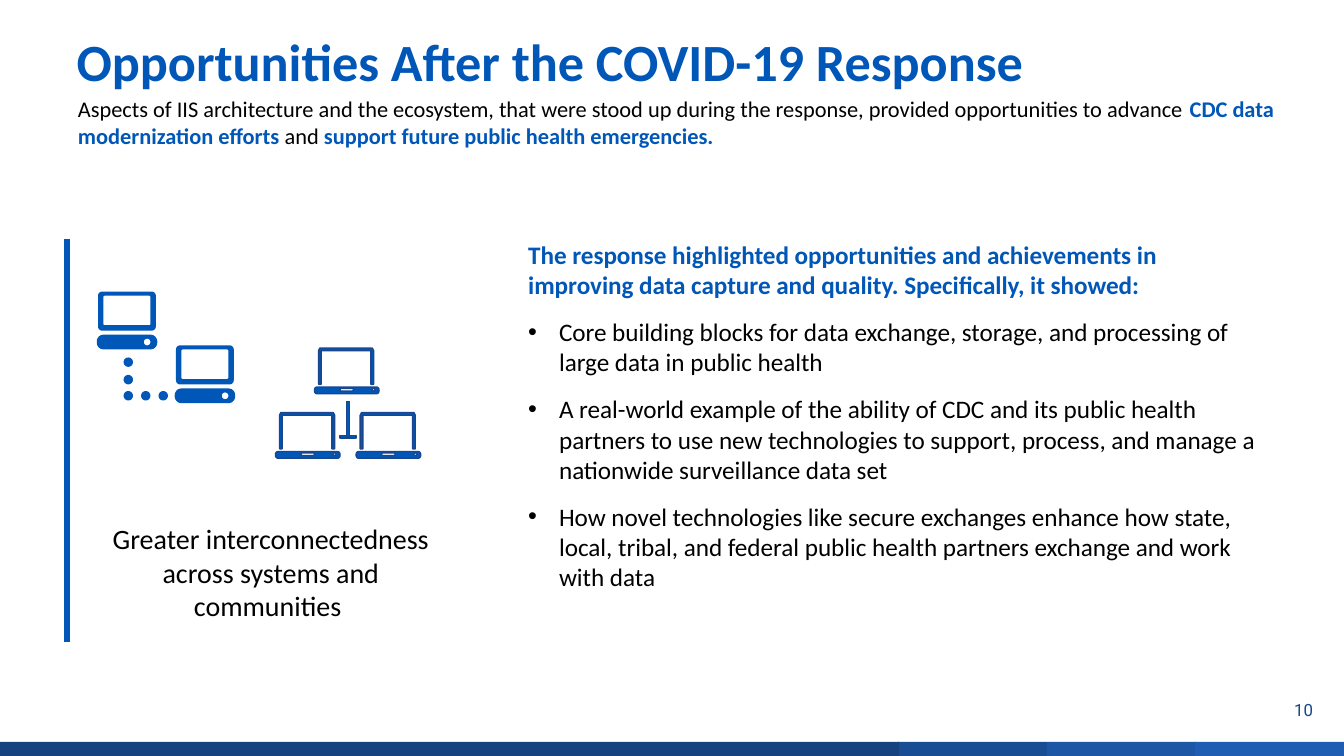
import math
from pptx import Presentation, util as u
from pptx.dml.color import RGBColor
from pptx.enum import shapes, text
from pptx.oxml.ns import qn
from lxml import etree

PX = 9144  # EMU per px, 100 px to the inch

THEME = {
    "blue": "0057B7", "edge": "1A468D", "white": "FFFFFF",
    "footer": ["194D93", "1C56A4", "1E5DB2", "164380"],
    # style: font, size, bold, colour
    "title": ("Calibri", 28, True, "0057B7"),
    "intro": ("Calibri", 12, False, "000000"),
    "intro_key": ("Calibri", 12, True, "0057B7"),
    "lead": ("Calibri", 13.5, True, "0057B7"),
    "bullet": ("Calibri", 13.5, False, "000000"),
    "caption": ("Calibri", 15, False, "000000"),
    "number": ("Roboto", 9, False, "17468F"),
}

prs = Presentation()
prs.slide_width = 1000 * PX
prs.slide_height = prs.slide_width * 9 // 16
s = prs.slides.add_slide(prs.slide_layouts[1])


def rounded(x, y, w, h, r):
    """Corner points of a rounded rectangle; r of half the side gives a circle."""
    corners = [(x + w - r, y + h - r), (x + r, y + h - r), (x + r, y + r), (x + w - r, y + r)]
    return [(cx + r * math.cos(math.radians(90 * i + a)), cy + r * math.sin(math.radians(90 * i + a)))
            for i, (cx, cy) in enumerate(corners) for a in range(0, 91, 15)]


def paint(sp, fill, line=None):
    """Flat fill, thin edge or none, no shadow."""
    sp.shadow.inherit = False
    sp.fill.solid()
    sp.fill.fore_color.rgb = RGBColor.from_string(fill)
    if line:
        sp.line.color.rgb = RGBColor.from_string(line)
        sp.line.width = u.Pt(0.75)
    else:
        sp.line.fill.background()


# Plain rectangles: footer bars, network joints, caption panel
bars = [(668 + 111 * i, 552, 111, 12) for i in range(2)] + [(889, 552, 111, 12), (0, 552, 669, 12)]
rects = [(box, color, None) for box, color in zip(bars, THEME["footer"])]
rects += [((253, 324, 12, 2), THEME["blue"], THEME["edge"]),
          ((258, 299, 2, 26), THEME["blue"], THEME["edge"]),
          ((72, 373, 259, 105), THEME["white"], None)]
for box, color, line in rects:
    sp = s.shapes.add_shape(shapes.MSO_SHAPE.RECTANGLE, *[v * PX for v in box])
    paint(sp, color, line)
caption = sp
clr = caption._element.spPr.find(qn("a:solidFill"))[0]
etree.SubElement(clr, qn("a:alpha"), val="54000")

# Vertical rule at the left
rule = s.shapes.add_connector(shapes.MSO_CONNECTOR.STRAIGHT, 50 * PX, 178 * PX, 50 * PX, 478 * PX)
rule.line.color.rgb = RGBColor.from_string(THEME["blue"])
rule.line.width = u.Pt(3)
etree.SubElement(rule._element.spPr, qn("a:effectLst"))

# Icon outlines: each is a list of closed contours, inner ones are holes
icons = []

# Two desktop computers: screen with opening, base with button
for x, y in [(72, 217), (130, 257)]:
    icons.append(([rounded(x + 1, y, 43, 29, 3), rounded(x + 5, y + 3, 35, 22, 1)], None))
    icons.append(([rounded(x, y + 32, 45, 11, 5), rounded(x + 35, y + 35, 5, 5, 2.5)], None))

# Dots linking the desktops
dots = [(92, 266), (92, 279)] + [(92 + 13 * i, 291) for i in range(3)]
icons.append(([rounded(x, y, 7, 7, 3.5) for x, y in dots], None))

# Three laptops: lid and base with slot and button
lid = [(0, 27), (0, 2), (1, 0), (40, 0), (41, 2), (41, 27), (39, 27), (39, 2), (2, 2), (2, 27)]
for x, y in [(208, 307), (268, 307), (237, 259)]:
    icons.append(([[(x + dx, y + dy) for dx, dy in lid]], THEME["edge"]))
    icons.append(([rounded(x - 3, y + 29, 48, 5, 2), rounded(x + 16, y + 30, 10, 2, 1),
                   rounded(x + 40, y + 30, 2, 2, 1)], THEME["edge"]))

for contours, line in icons:
    fb = None
    for pts in contours:
        pts = [(x * PX, y * PX) for x, y in pts]
        if fb is None:
            fb = s.shapes.build_freeform(*pts[0], scale=1.0)
        else:
            fb.move_to(*pts[0])
        fb.add_line_segments(pts[1:], close=True)
    paint(fb.convert_to_shape(), THEME["blue"], line)

# Text holders: title, list, introduction, page number, caption
title, body = s.placeholders
intro = s.shapes.add_textbox(0, 0, 0, 0)
number = s.shapes.add_textbox(0, 0, 0, 0)
places = [(title, (50, 23, 900, 94), (7, 4)), (body, (383, 173, 564, 343), (10, 5)),
          (intro, (51, 67, 910, 86), (7, 4)), (number, (934, 518, 50, 30), (7, 4)),
          (caption, (72, 373, 259, 105), (10, 5))]
for sp, box, (mx, my) in places:
    for name, v in zip(("left", "top", "width", "height"), box):
        setattr(sp, name, v * PX)
    fmt = {"word_wrap": True, "auto_size": text.MSO_AUTO_SIZE.NONE,
           "vertical_anchor": text.MSO_ANCHOR.MIDDLE if sp is caption else text.MSO_ANCHOR.TOP,
           "margin_left": mx * PX, "margin_right": mx * PX,
           "margin_top": my * PX, "margin_bottom": my * PX}
    for name, v in fmt.items():
        setattr(sp.text_frame, name, v)

# Wording: holder, paragraph format, paragraphs as lists of (style, text)
left, center, right = text.PP_ALIGN.LEFT, text.PP_ALIGN.CENTER, text.PP_ALIGN.RIGHT
wording = [
    (title, {"alignment": left, "line_spacing": 0.9},
     [[("title", "Opportunities After the COVID-19 Response")]]),
    (intro, {"alignment": left},
     [[("intro", "Aspects of IIS architecture and the ecosystem, that were stood up during the response, "
                 "provided opportunities to advance "),
       ("intro_key", "CDC data modernization efforts "),
       ("intro", "and "),
       ("intro_key", "support future public health emergencies.")]]),
    (body, {"alignment": left, "space_before": u.Pt(9)},
     [[("lead", "The response highlighted opportunities and achievements in improving data capture "
                "and quality. Specifically, it showed:")],
      [("bullet", "Core building blocks for data exchange, storage, and processing of large data "
                  "in public health")],
      [("bullet", "A real-world example of the ability of CDC and its public health partners to use "
                  "new technologies to support, process, and manage a nationwide surveillance data set")],
      [("bullet", "How novel technologies like secure exchanges enhance how state, local, tribal, and "
                  "federal public health partners exchange and work with data")]]),
    (caption, {"alignment": center},
     [[("caption", "Greater interconnectedness across systems and communities ")]]),
    (number, {"alignment": right, "line_spacing": 0.9, "space_before": u.Pt(7.5)},
     [[("number", "10")]]),
]
for sp, fmt, paragraphs in wording:
    tf = sp.text_frame
    for i, runs in enumerate(paragraphs):
        p = tf.add_paragraph() if i else tf.paragraphs[0]
        for name, v in fmt.items():
            setattr(p, name, v)
        if sp is body:  # the lead has no bullet, the rest hang by 23 px
            pPr = p._p.get_or_add_pPr()
            hang = 23 * PX if i else 0
            pPr.set("marL", str(hang))
            pPr.set("indent", str(-hang))
            if i:
                etree.SubElement(pPr, qn("a:buChar"), char="•")
            else:
                etree.SubElement(pPr, qn("a:buNone"))
        for style, words in runs:
            r = p.add_run()
            r.text = words
            face, size, bold, color = THEME[style]
            for name, v in {"name": face, "size": u.Pt(size), "bold": bold}.items():
                setattr(r.font, name, v)
            r.font.color.rgb = RGBColor.from_string(color)

prs.save("out.pptx")
